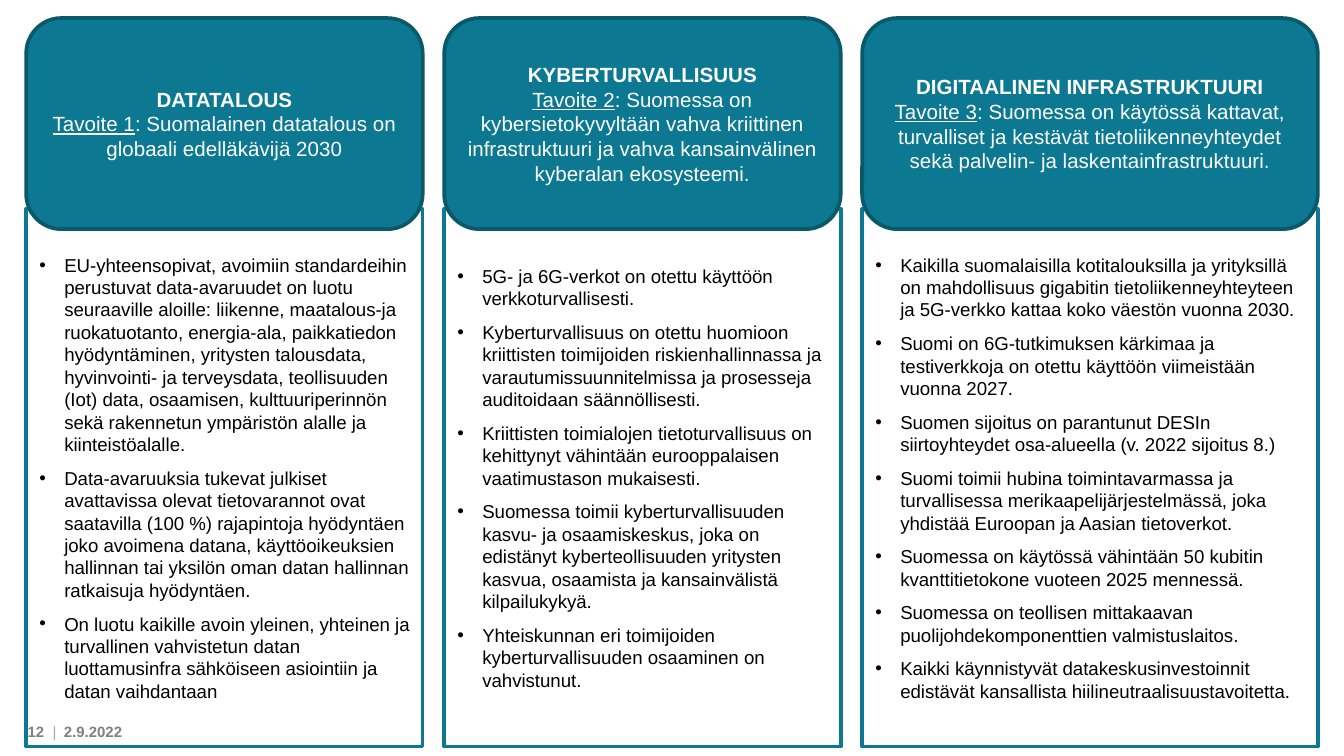
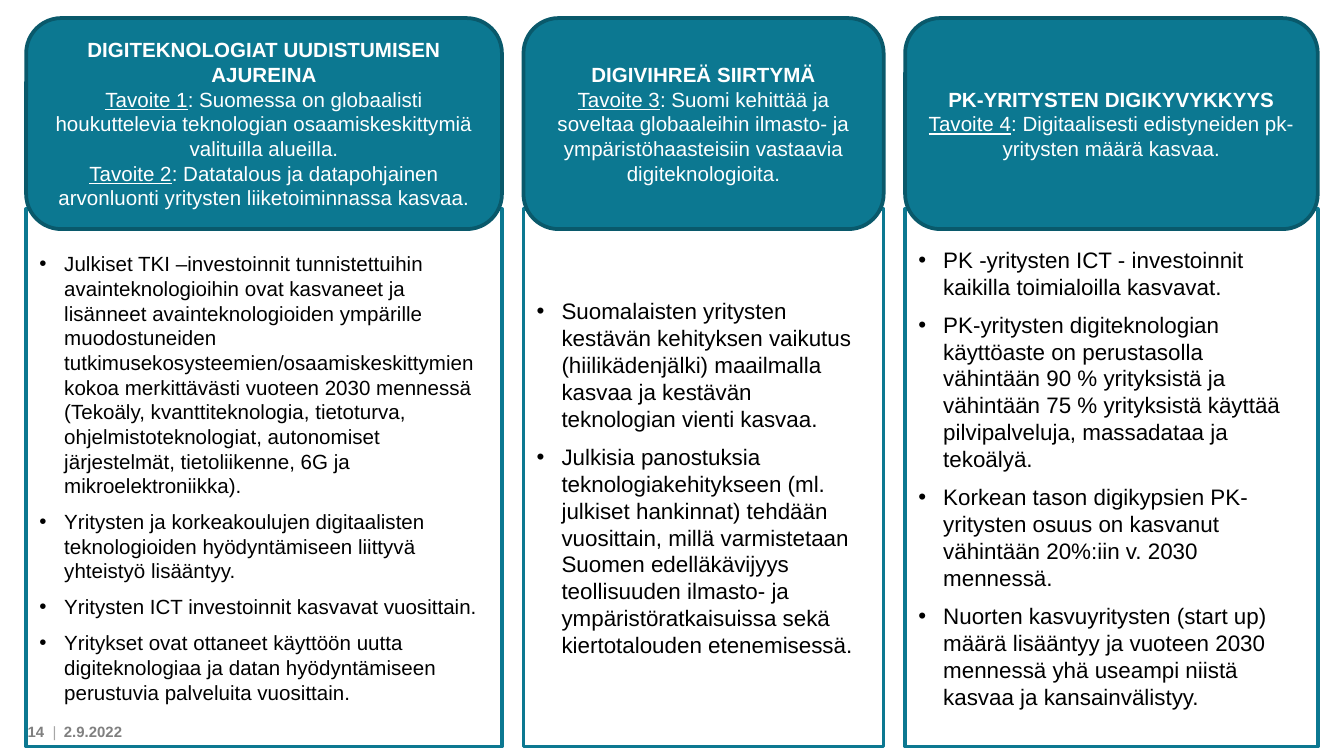
from lxml import etree
from pptx import Presentation
from pptx.dml.color import RGBColor
from pptx.enum.shapes import MSO_SHAPE
from pptx.enum.text import MSO_ANCHOR, PP_ALIGN
from pptx.oxml.ns import qn
from pptx.util import Pt

RECT, ROUND = MSO_SHAPE.RECTANGLE, MSO_SHAPE.ROUNDED_RECTANGLE
MIDDLE = MSO_ANCHOR.MIDDLE
LEFT, CENTER, RIGHT = PP_ALIGN.LEFT, PP_ALIGN.CENTER, PP_ALIGN.RIGHT

PX = 4572  # 200 px to the inch
COLORS = {
    "teal": "0C7891", "edge": "09596B", "white": "FFFFFF",
    "black": "000000", "grey": "808080", "pale": "A6A6A6",
}
FONT = "Arial"
MARGIN, GAP = 39, 32
HEAD_TOP, HEAD_H = 27, 314
LIST_TOP, LIST_H = 311, 800
FOOT_TOP, FOOT_H = 1067, 44
INDENT = 37
DATE = "2.9.2022"

# Each column: width, heading, goals, list size, list items
SLIDES = [
    ("12", [
        (590, "DATATALOUS",
         ["Tavoite 1: Suomalainen datatalous on globaali edelläkävijä 2030"],
         10, [
             "EU-yhteensopivat, avoimiin standardeihin perustuvat data-avaruudet "
             "on luotu seuraaville aloille: liikenne, maatalous-ja ruokatuotanto, "
             "energia-ala, paikkatiedon hyödyntäminen, yritysten talousdata, "
             "hyvinvointi- ja terveysdata, teollisuuden (Iot) data, osaamisen, "
             "kulttuuriperinnön sekä rakennetun ympäristön alalle ja "
             "kiinteistöalalle.",
             "Data-avaruuksia tukevat julkiset avattavissa olevat tietovarannot "
             "ovat saatavilla (100 %) rajapintoja hyödyntäen joko avoimena "
             "datana, käyttöoikeuksien hallinnan tai yksilön oman datan "
             "hallinnan ratkaisuja hyödyntäen.",
             "On luotu kaikille avoin yleinen, yhteinen ja turvallinen "
             "vahvistetun datan luottamusinfra sähköiseen asiointiin ja datan "
             "vaihdantaan",
         ]),
        (590, "KYBERTURVALLISUUS",
         ["Tavoite 2: Suomessa on kybersietokyvyltään vahva kriittinen "
          "infrastruktuuri ja vahva kansainvälinen kyberalan ekosysteemi."],
         10, [
             "5G- ja 6G-verkot on otettu käyttöön verkkoturvallisesti.",
             "Kyberturvallisuus on otettu huomioon kriittisten toimijoiden "
             "riskienhallinnassa ja varautumissuunnitelmissa ja prosesseja "
             "auditoidaan säännöllisesti.",
             "Kriittisten toimialojen tietoturvallisuus on kehittynyt vähintään "
             "eurooppalaisen vaatimustason mukaisesti.",
             "Suomessa toimii kyberturvallisuuden kasvu- ja osaamiskeskus, joka "
             "on edistänyt kyberteollisuuden yritysten kasvua, osaamista ja "
             "kansainvälistä kilpailukykyä.",
             "Yhteiskunnan eri toimijoiden kyberturvallisuuden osaaminen on "
             "vahvistunut.",
         ]),
        (678, "DIGITAALINEN INFRASTRUKTUURI",
         ["Tavoite 3: Suomessa on käytössä kattavat, turvalliset ja kestävät "
          "tietoliikenneyhteydet sekä palvelin- ja laskentainfrastruktuuri."],
         10, [
             "Kaikilla suomalaisilla kotitalouksilla ja yrityksillä on "
             "mahdollisuus gigabitin tietoliikenneyhteyteen ja 5G-verkko kattaa "
             "koko väestön vuonna 2030.",
             "Suomi on 6G-tutkimuksen kärkimaa ja testiverkkoja on otettu "
             "käyttöön viimeistään vuonna 2027.",
             "Suomen sijoitus on parantunut DESIn siirtoyhteydet osa-alueella "
             "(v. 2022 sijoitus 8.)",
             "Suomi toimii hubina toimintavarmassa ja turvallisessa "
             "merikaapelijärjestelmässä, joka yhdistää Euroopan ja Aasian "
             "tietoverkot.",
             "Suomessa on käytössä vähintään 50 kubitin kvanttitietokone "
             "vuoteen 2025 mennessä.",
             "Suomessa on teollisen mittakaavan puolijohdekomponenttien "
             "valmistuslaitos.",
             "Kaikki käynnistyvät datakeskusinvestoinnit edistävät kansallista "
             "hiilineutraalisuustavoitetta.",
         ]),
    ]),
    ("14", [
        (708, "DIGITEKNOLOGIAT UUDISTUMISEN AJUREINA",
         ["Tavoite 1: Suomessa on globaalisti houkuttelevia teknologian "
          "osaamiskeskittymiä valituilla alueilla.",
          "Tavoite 2: Datatalous ja datapohjainen arvonluonti yritysten "
          "liiketoiminnassa kasvaa."],
         11, [
             "Julkiset TKI –investoinnit tunnistettuihin avainteknologioihin "
             "ovat kasvaneet ja lisänneet avainteknologioiden ympärille "
             "muodostuneiden tutkimusekosysteemien/osaamiskeskittymien kokoa "
             "merkittävästi vuoteen 2030 mennessä (Tekoäly, kvanttiteknologia, "
             "tietoturva, ohjelmistoteknologiat, autonomiset järjestelmät, "
             "tietoliikenne, 6G ja mikroelektroniikka).",
             "Yritysten ja korkeakoulujen digitaalisten teknologioiden "
             "hyödyntämiseen liittyvä yhteistyö lisääntyy.",
             "Yritysten ICT investoinnit kasvavat vuosittain.",
             "Yritykset ovat ottaneet käyttöön uutta digiteknologiaa ja datan "
             "hyödyntämiseen perustuvia palveluita vuosittain.",
         ]),
        (536, "DIGIVIHREÄ SIIRTYMÄ",
         ["Tavoite 3: Suomi kehittää ja soveltaa globaaleihin ilmasto- ja "
          "ympäristöhaasteisiin vastaavia digiteknologioita."],
         12, [
             "Suomalaisten yritysten kestävän kehityksen vaikutus "
             "(hiilikädenjälki) maailmalla kasvaa ja kestävän teknologian "
             "vienti kasvaa.",
             "Julkisia panostuksia teknologiakehitykseen (ml. julkiset "
             "hankinnat) tehdään vuosittain, millä varmistetaan Suomen "
             "edelläkävijyys teollisuuden ilmasto- ja ympäristöratkaisuissa "
             "sekä kiertotalouden etenemisessä.",
         ]),
        (614, "PK-YRITYSTEN DIGIKYVYKKYYS",
         ["Tavoite 4: Digitaalisesti edistyneiden pk-yritysten määrä kasvaa."],
         12, [
             "PK -yritysten ICT - investoinnit kaikilla toimialoilla kasvavat.",
             "PK-yritysten digiteknologian käyttöaste on perustasolla vähintään "
             "90 % yrityksistä ja vähintään 75 % yrityksistä käyttää "
             "pilvipalveluja, massadataa ja tekoälyä.",
             "Korkean tason digikypsien PK-yritysten osuus on kasvanut "
             "vähintään 20%:iin v. 2030 mennessä.",
             "Nuorten kasvuyritysten (start up) määrä lisääntyy ja vuoteen 2030 "
             "mennessä yhä useampi niistä kasvaa ja kansainvälistyy.",
         ]),
    ]),
]


def add_box(slide, kind, place, fill, line):
    box = slide.shapes.add_shape(kind, *[n * PX for n in place])
    box.shadow.inherit = False
    box.fill.solid()
    box.fill.fore_color.rgb = RGBColor.from_string(COLORS[fill])
    box.line.color.rgb = RGBColor.from_string(COLORS[line])
    box.line.width = Pt(2)
    frame = box.text_frame
    frame.word_wrap = True
    frame.vertical_anchor = MIDDLE
    return frame


def add_text(para, parts, size, color, align):
    """Fill a paragraph with (text, bold, underline) parts."""
    para.alignment = align
    for text, bold, under in parts:
        run = para.add_run()
        run.text = text
        font = run.font
        font.name, font.size = FONT, Pt(size)
        font.bold, font.underline = bold, under
        font.color.rgb = RGBColor.from_string(COLORS[color])


prs = Presentation()
prs.slide_width, prs.slide_height = 2000 * PX, 1125 * PX
blank = prs.slide_layouts[6]

for number, columns in SLIDES:
    slide = prs.slides.add_slide(blank)

    # Bordered lists
    left = MARGIN
    for width, _, _, size, items in columns:
        place = (left, LIST_TOP, width, LIST_H)
        frame = add_box(slide, RECT, place, "white", "teal")
        for i, item in enumerate(items):
            para = frame.add_paragraph() if i else frame.paragraphs[0]
            add_text(para, [(item, False, False)], size, "black", LEFT)
            para.space_after = Pt(6)
            props = para._p.get_or_add_pPr()
            props.set("marL", str(INDENT * PX))
            props.set("indent", str(-INDENT * PX))
            etree.SubElement(props, qn("a:buFont")).set("typeface", FONT)
            etree.SubElement(props, qn("a:buChar")).set("char", "•")
        left += width + GAP

    # Footer: date, then page number
    footer = [
        (95, 150, (0, 0, 0, 0), LEFT, [(DATE, True, "grey")]),
        (0, 88, (20, 10, 4, 10), RIGHT,
         [(number + "  ", True, "grey"), ("|", False, "pale")]),
    ]
    for x, width, pads, align, parts in footer:
        place = (x, FOOT_TOP, width, FOOT_H)
        frame = slide.shapes.add_textbox(*[n * PX for n in place]).text_frame
        frame.word_wrap = True
        frame.vertical_anchor = MIDDLE
        frame.margin_left, frame.margin_top = pads[0] * PX, pads[1] * PX
        frame.margin_right, frame.margin_bottom = pads[2] * PX, pads[3] * PX
        for text, bold, color in parts:
            add_text(frame.paragraphs[0], [(text, bold, False)], 8, color, align)

    # Rounded headings, over the lists
    left = MARGIN
    for width, heading, goals, _, _ in columns:
        place = (left, HEAD_TOP, width, HEAD_H)
        frame = add_box(slide, ROUND, place, "teal", "edge")
        add_text(frame.paragraphs[0], [(heading, True, False)], 11, "white", CENTER)
        for goal in goals:
            label, colon, rest = goal.partition(":")
            parts = [(label, False, True), (colon + rest, False, False)]
            add_text(frame.add_paragraph(), parts, 11, "white", CENTER)
        left += width + GAP

prs.save("out.pptx")
